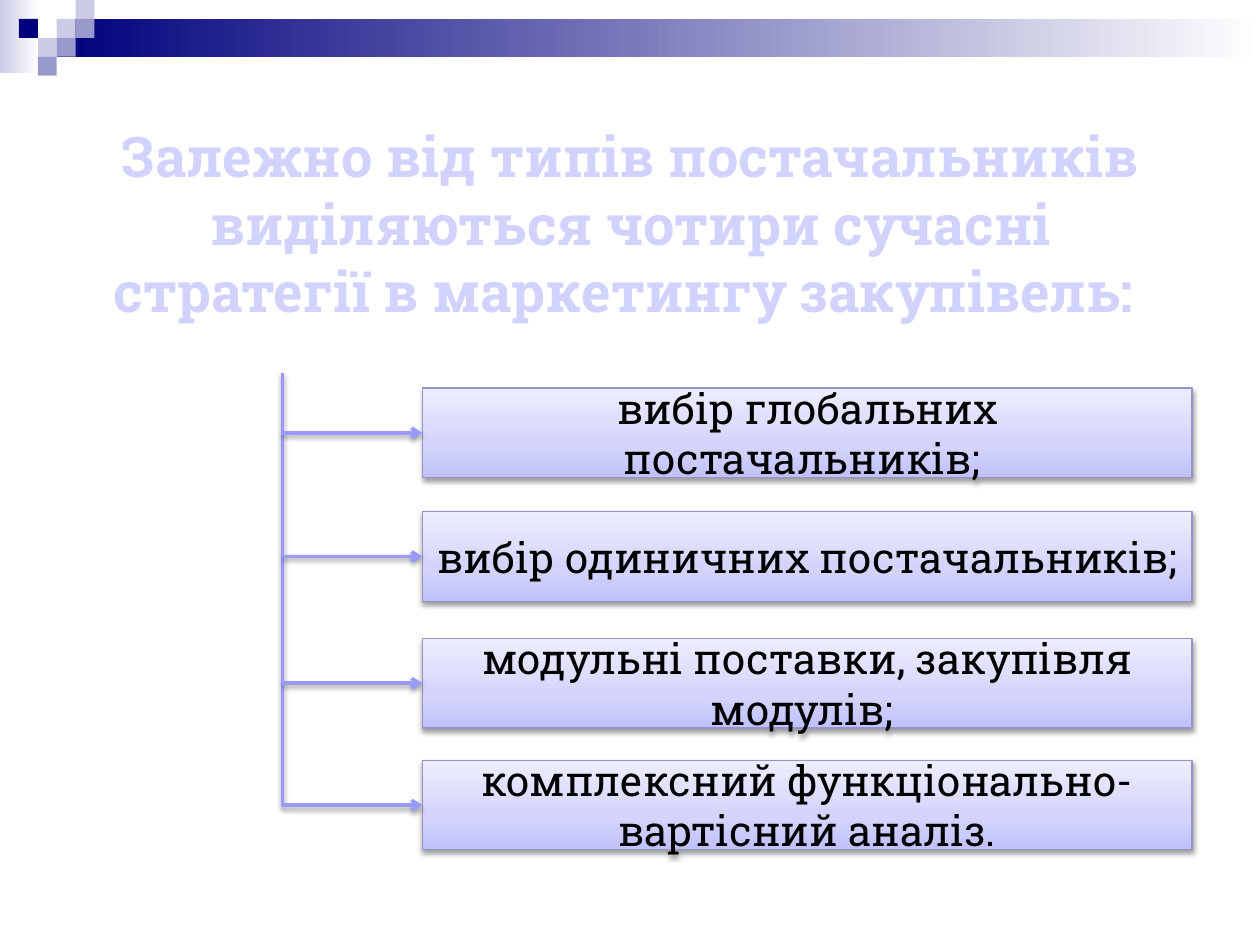
from copy import deepcopy

from lxml.etree import SubElement
from pptx import Presentation
from pptx.dml.color import RGBColor
from pptx.enum.shapes import MSO_CONNECTOR as Link, MSO_SHAPE as Shape
from pptx.enum.text import MSO_ANCHOR as Anchor, PP_ALIGN as Align
from pptx.oxml.ns import qn
from pptx.util import Pt

NAVY = RGBColor(0x00, 0x00, 0x7D)
MIST = RGBColor(0xCC, 0xCC, 0xE6)
LAVENDER = RGBColor(0x99, 0x99, 0xCC)
WHITE = RGBColor(0xFF, 0xFF, 0xFF)
BLACK = RGBColor(0x00, 0x00, 0x00)
TITLE_COLOR = RGBColor(0xD2, 0xD2, 0xFF)
BOX_BORDER = RGBColor(0x94, 0x94, 0xC9)
ARROW_COLOR = RGBColor(0x99, 0x99, 0xFF)
BOX_STOPS = [
    (0, RGBColor(0xC1, 0xC1, 0xFB)),
    (0.35, RGBColor(0xD3, 0xD3, 0xFB)),
    (1, RGBColor(0xED, 0xED, 0xFF)),
]

FONT = "Roboto Slab"
TITLE = ("Залежно від типів постачальників виділяються чотири сучасні "
         "стратегії в маркетингу закупівель: ")
STRATEGIES = [
    (221.8, "вибір глобальних постачальників; "),
    (292.4, "вибір одиничних постачальників; "),
    (364.8, "модульні поставки, закупівля модулів; "),
    (434.4, "комплексний функціонально-вартісний аналіз."),
]


def add_box(page, left, top, width, height):
    box = page.shapes.add_shape(
        Shape.RECTANGLE, Pt(left), Pt(top), Pt(width), Pt(height))
    box.shadow.inherit = False
    box.line.fill.background()
    return box


def fill_solid(box, color):
    box.fill.solid()
    box.fill.fore_color.rgb = color


def fill_gradient(box, stops, angle=0):
    box.fill.gradient()
    box.fill.gradient_angle = angle
    stop_list = box._element.spPr.find(".//" + qn("a:gsLst"))
    while len(stop_list) < len(stops):
        stop_list.append(deepcopy(stop_list[0]))
    for stop, (position, color) in zip(box.fill.gradient_stops, stops):
        stop.position = position
        stop.color.rgb = color


def add_soft_shadow(item):
    properties = item._element.spPr
    effects = properties.find(qn("a:effectLst"))
    if effects is None:
        effects = SubElement(properties, qn("a:effectLst"))
    shadow = SubElement(effects, qn("a:outerShdw"), {
        "blurRad": str(Pt(3.1)), "dist": str(Pt(1.6)), "dir": "5400000",
        "rotWithShape": "0"})
    color = SubElement(shadow, qn("a:srgbClr"), val=str(BLACK))
    SubElement(color, qn("a:alpha"), val="38000")


def write_text(frame, text, color, **formats):
    frame.word_wrap = True
    para = frame.paragraphs[0]
    para.alignment = Align.CENTER
    span = para.add_run()
    span.text = text
    span.font.color.rgb = color
    for name, value in {"name": FONT, **formats}.items():
        setattr(span.font, name, value)


def add_header(page, width, cell):
    """Place the fading bands and the checkered squares, sized by one cell."""
    bands = [
        (0, 0, 22.3, 41.8, MIST),
        (3 * cell, cell, width - 3 * cell, 2 * cell, NAVY),
    ]
    for left, top, band_width, height, color in bands:
        band = add_box(page, left, top, band_width, height)
        fill_gradient(band, [(0, color), (1, WHITE)])
    squares = [
        (3, 1, MIST), (4, 0, MIST), (4, 1, LAVENDER), (2, 2, MIST),
        (1, 1, NAVY), (3, 2, LAVENDER), (2, 3, LAVENDER),
    ]
    for column, row, color in squares:
        square = add_box(page, column * cell, row * cell, cell, cell)
        fill_solid(square, color)


def add_title(page, left, top, width, height):
    box = page.shapes.add_textbox(Pt(left), Pt(top), Pt(width), Pt(height))
    write_text(box.text_frame, TITLE, TITLE_COLOR, size=Pt(32), bold=True)


def add_strategy(page, left, top, width, height, text):
    box = add_box(page, left, top, width, height)
    fill_gradient(box, BOX_STOPS, angle=90)
    box.line.color.rgb = BOX_BORDER
    box.line.width = Pt(0.75)
    add_soft_shadow(box)
    box.text_frame.vertical_anchor = Anchor.MIDDLE
    write_text(box.text_frame, text, BLACK, size=Pt(24))
    return box


def style_arrow(arrow):
    arrow.line.color.rgb = ARROW_COLOR
    arrow.line.width = Pt(2)
    SubElement(arrow.line._get_or_add_ln(), qn("a:tailEnd"), type="arrow")
    add_soft_shadow(arrow)


def add_trunk(page, left, top, right, bottom):
    """Draw an arrow that runs down and then turns right."""
    across, down = right - left, bottom - top
    middle_x, middle_y = (left + right) / 2, (top + bottom) / 2
    trunk = page.shapes.add_connector(
        Link.ELBOW,
        Pt(middle_x + down / 2), Pt(middle_y - across / 2),
        Pt(middle_x - down / 2), Pt(middle_y + across / 2))
    properties = trunk._element.spPr
    properties.find(qn("a:prstGeom")).set("prst", "bentConnector2")
    properties.find(qn("a:xfrm")).set("rot", "16200000")
    style_arrow(trunk)


def add_branch(page, left, box):
    middle = box.top + box.height // 2
    branch = page.shapes.add_connector(
        Link.STRAIGHT, Pt(left), middle, box.left, middle)
    branch.end_connect(box, 1)
    style_arrow(branch)


def add_strategy_tree(page, left, top, width):
    box_left, box_height = left + 80, 51.2
    boxes = [
        add_strategy(page, box_left, box_top, width - 80, box_height, text)
        for box_top, text in STRATEGIES
    ]
    last_middle = STRATEGIES[-1][0] + box_height / 2
    add_trunk(page, left, top, box_left, last_middle)
    for box in boxes[:-1]:
        add_branch(page, left, box)


def main():
    deck = Presentation()
    deck.slide_width, deck.slide_height = Pt(720), Pt(540)
    page = deck.slides.add_slide(deck.slide_layouts[6])
    add_header(page, 720, 10.8)
    add_title(page, 36.6, 66.2, 648, 124.6)
    add_strategy_tree(page, 161.4, 213.2, 519.8)
    deck.save("out.pptx")


if __name__ == "__main__":
    main()
